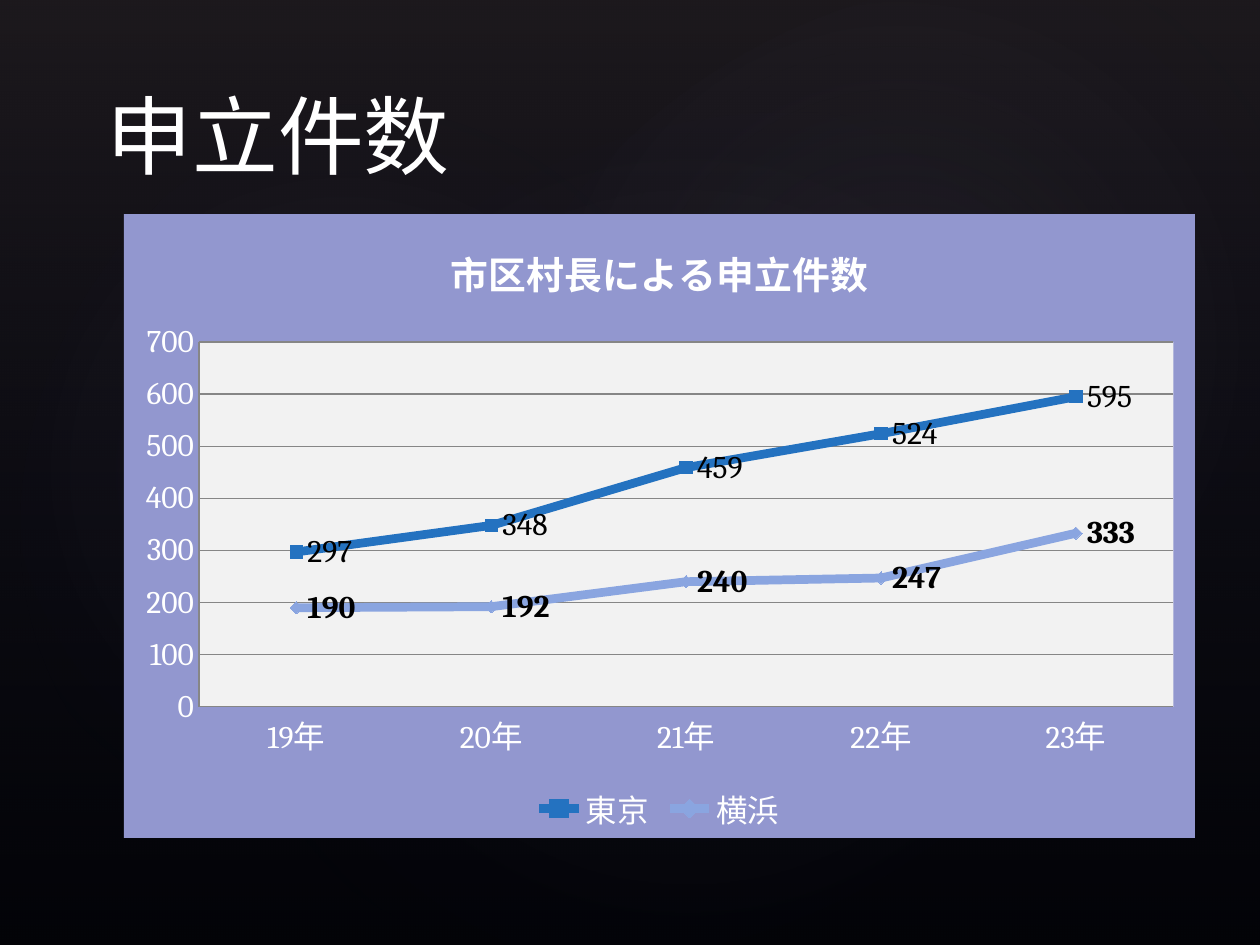
from pptx import Presentation
from pptx.chart.data import CategoryChartData
from pptx.dml.color import RGBColor
from pptx.enum.chart import (XL_CHART_TYPE, XL_LABEL_POSITION, XL_LEGEND_POSITION,
                             XL_MARKER_STYLE, XL_TICK_MARK)
from pptx.enum.shapes import MSO_SHAPE
from pptx.enum.text import MSO_ANCHOR
from pptx.oxml import parse_xml
from pptx.oxml.ns import nsdecls
from pptx.util import Pt

FONT = "Cambria"
YEARS = ["19年", "20年", "21年", "22年", "23年"]
SERIES = [
    ("東京", [297, 348, 459, 524, 595], "2472C0", XL_MARKER_STYLE.SQUARE, False),
    ("横浜", [190, 192, 240, 247, 333], "8AA5E0", XL_MARKER_STYLE.DIAMOND, True),
]
GLOWS = [
    (108, 82, 570, 449, 328.7, 7),
    (-22, 92, 436, 353, 294.3, 8),
    (258, 9, 510, 374, 328.7, 8),
]
ROUND = ('<a:path path="circle"><a:fillToRect l="50000" t="50000" '
         'r="50000" b="50000"/></a:path>')


def color(value):
    """Turn a hex string into a colour."""
    return RGBColor.from_string(value)


def set_font(font, size, value="FFFFFF", bold=False):
    """Set the face, size, colour and weight of a font."""
    font.name, font.size, font.bold = FONT, Pt(size), bold
    font.color.rgb = color(value)


def set_fill(fill, value):
    """Make a fill solid."""
    fill.solid()
    fill.fore_color.rgb = color(value)


def add_gradient(s, kind, box, stops, direction, rotation=0):
    """Add a lineless shape with a translucent gradient of (position, colour, alpha) stops."""
    sp = s.shapes.add_shape(kind, *map(Pt, box))
    sp.rotation = rotation
    sp.shadow.inherit = False
    sp.line.fill.background()
    stop_xml = "".join(
        f'<a:gs pos="{pos * 1000}"><a:srgbClr val="{value}">'
        f'<a:alpha val="{alpha * 1000}"/></a:srgbClr></a:gs>'
        for pos, value, alpha in stops)
    grad = parse_xml(f'<a:gradFill {nsdecls("a")} rotWithShape="1">'
                     f'<a:gsLst>{stop_xml}</a:gsLst>{direction}</a:gradFill>')
    sp._element.spPr.find(".//{*}prstGeom").addnext(grad)


def add_backdrop(s, x, y, w, h):
    """Lay a dark gradient and three soft glows over black."""
    set_fill(s.background.fill, "000000")
    add_gradient(s, MSO_SHAPE.RECTANGLE, (x, y, w, h),
                 [(0, "504652", 36), (100, "242852", 10)],
                 '<a:lin ang="5400000" scaled="0"/>')
    for left, top, width, height, rotation, alpha in GLOWS:
        add_gradient(s, MSO_SHAPE.OVAL, (x + left, y + top, width, height),
                     [(0, "C4BCC6", alpha), (58, "242852", 0)], ROUND, rotation)


def add_title(s, x, y, w, h):
    """Add the slide title."""
    tf = s.shapes.add_textbox(Pt(x), Pt(y), Pt(w), Pt(h)).text_frame
    tf.word_wrap = True
    tf.vertical_anchor = MSO_ANCHOR.BOTTOM
    p = tf.paragraphs[0]
    p.text = "申立件数"
    set_font(p.font, 49)


def style_areas(chart):
    """Fill the chart and plot areas and fix the plot's place."""
    plot_area = chart._chartSpace.chart.plotArea
    for old in plot_area.findall("{*}layout"):
        plot_area.remove(old)
    places = "".join(f'<c:{tag} val="{val}"/>' for tag, val in (
        ("layoutTarget", "inner"), ("xMode", "edge"), ("yMode", "edge"),
        ("x", 0.07), ("y", 0.205), ("w", 0.91), ("h", 0.585)))
    plot_area.insert(0, parse_xml(
        f'<c:layout {nsdecls("c")}><c:manualLayout>{places}</c:manualLayout></c:layout>'))

    def area(value):
        return parse_xml(
            f'<c:spPr {nsdecls("c", "a")}><a:solidFill><a:srgbClr val="{value}"/>'
            '</a:solidFill><a:ln><a:noFill/></a:ln></c:spPr>')

    plot_area.append(area("F2F2F2"))
    chart._chartSpace.chart.addnext(area("9297CF"))


def style_series(series, value, marker, bold):
    """Set the line, marker and value labels of a series."""
    series.smooth = False
    series.format.line.width = Pt(5)
    series.format.line.color.rgb = color(value)
    series.marker.style, series.marker.size = marker, 7
    set_fill(series.marker.format.fill, value)
    series.marker.format.line.color.rgb = color(value)
    labels = series.data_labels
    labels.show_value = True
    labels.position = XL_LABEL_POSITION.RIGHT
    set_font(labels.font, 18, "000000", bold)


def add_line_chart(s, x, y, w, h):
    """Add the line chart of petitions by year."""
    data = CategoryChartData()
    data.categories = YEARS
    for name, values, *_ in SERIES:
        data.add_series(name, values)
    chart = s.shapes.add_chart(XL_CHART_TYPE.LINE_MARKERS,
                               Pt(x), Pt(y), Pt(w), Pt(h), data).chart
    set_font(chart.font, 18)
    chart.has_title = True
    p = chart.chart_title.text_frame.paragraphs[0]
    p.text = "市区村長による申立件数"
    set_font(p.font, 21.6, bold=True)
    chart.chart_title.include_in_layout = False
    chart.has_legend = True
    chart.legend.position = XL_LEGEND_POSITION.BOTTOM
    chart.legend.include_in_layout = False
    set_font(chart.legend.font, 18)
    for axis in (chart.category_axis, chart.value_axis):
        axis.major_tick_mark = axis.minor_tick_mark = XL_TICK_MARK.NONE
        axis.format.line.color.rgb = color("868686")
        set_font(axis.tick_labels.font, 18)
    axis = chart.value_axis
    axis.minimum_scale, axis.maximum_scale, axis.major_unit = 0, 700, 100
    axis.major_gridlines.format.line.color.rgb = color("868686")
    chart.plots[0].vary_by_categories = False
    for series, (_, _, value, marker, bold) in zip(chart.series, SERIES):
        style_series(series, value, marker, bold)
    style_areas(chart)


def main():
    """Build and save the slide."""
    prs = Presentation()
    prs.slide_width, prs.slide_height = Pt(720), Pt(540)
    s = prs.slides.add_slide(prs.slide_layouts[6])
    add_backdrop(s, 0, 0, 720, 540)
    add_line_chart(s, 70.8, 122.4, 612, 356.4)
    add_title(s, 54, 37.5, 594, 72)
    prs.save("out.pptx")


if __name__ == "__main__":
    main()
